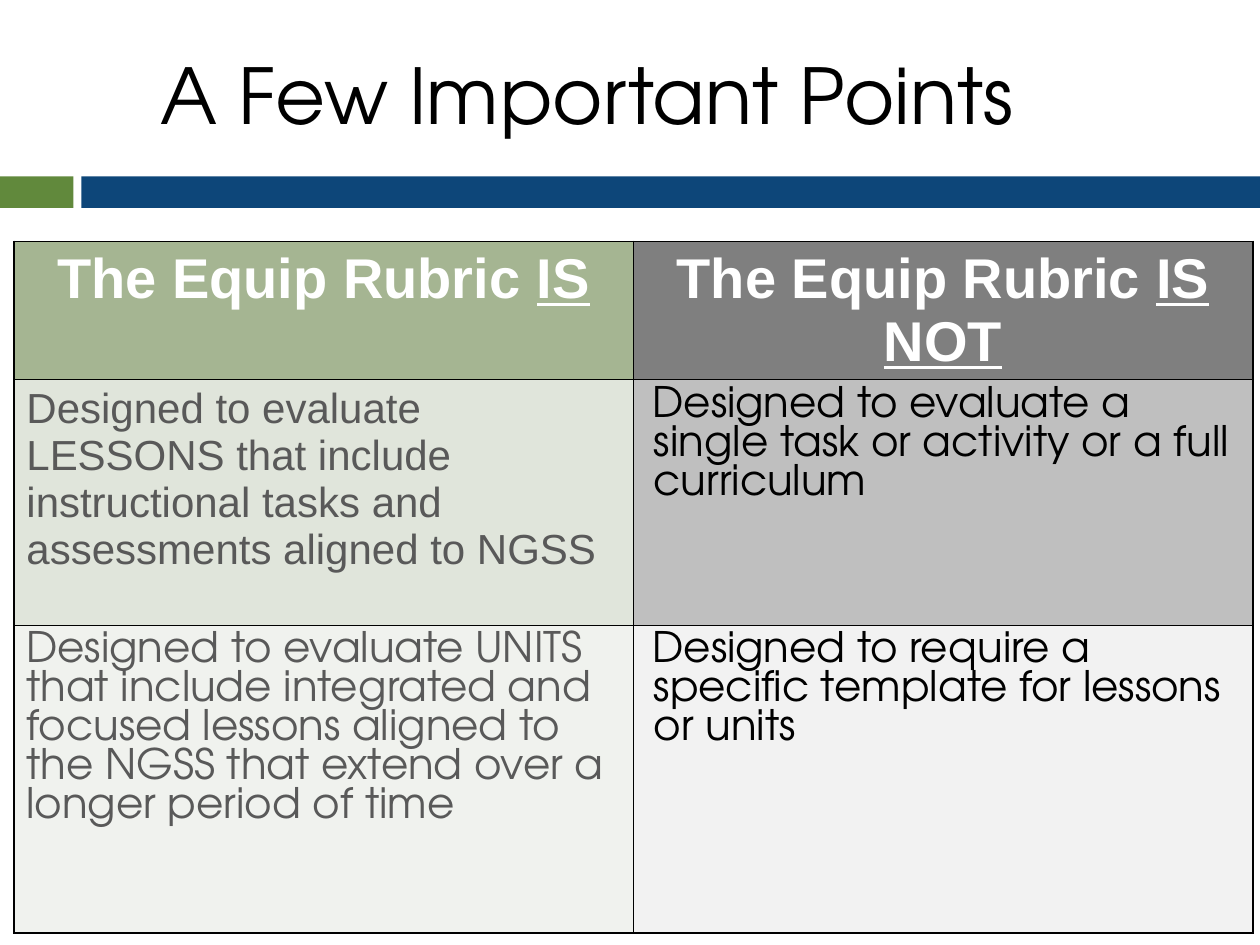
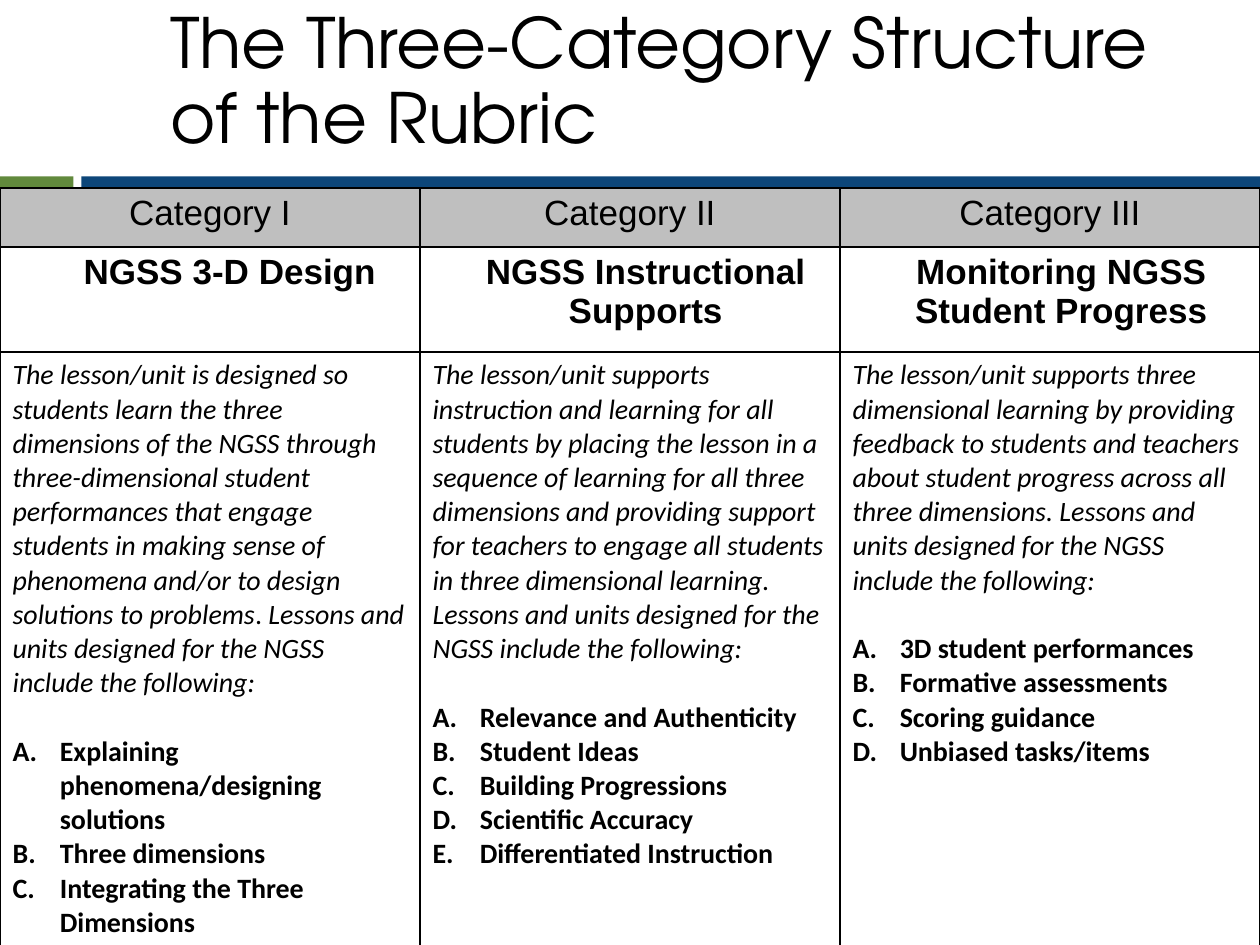
from lxml.etree import SubElement
from pptx import Presentation
from pptx.dml.color import RGBColor
from pptx.enum.shapes import MSO_SHAPE
from pptx.enum.text import MSO_ANCHOR, MSO_AUTO_SIZE, PP_ALIGN
from pptx.oxml.ns import qn
from pptx.util import Pt

rgb = RGBColor.from_string
ADVENTOR, ARIAL, CALIBRI = "TeX Gyre Adventor", "Arial", "Calibri"
BLACK, WHITE, GRAY = "000000", "FFFFFF", "595959"
LEFT, CENTER = PP_ALIGN.LEFT, PP_ALIGN.CENTER


def write(paragraph, text, size, font, color=BLACK, bold=False, italic=False,
          underline=False, align=LEFT, spacing=None, before=None,
          margin=0, indent=0, numbering=None):
    paragraph.alignment = align
    if spacing:
        paragraph.line_spacing = spacing
    if before:
        paragraph.space_before = Pt(before)
    properties = paragraph._p.get_or_add_pPr()
    properties.set("marL", str(Pt(margin)))
    properties.set("indent", str(Pt(indent)))
    if numbering:
        SubElement(properties, qn("a:buAutoNum"), type=numbering)
    run = paragraph.add_run()
    run.text = text
    run.font.size = Pt(size)
    run.font.name = font
    run.font.color.rgb = rgb(color)
    run.font.bold = bold
    run.font.italic = italic
    run.font.underline = underline


def add_grid(slide, left, top, column_width, row_heights, fills):
    columns = len(fills[0])
    grid = slide.shapes.add_table(len(fills), columns, Pt(left), Pt(top),
                                  Pt(column_width * columns), Pt(sum(row_heights))).table
    grid.first_row = grid.horz_banding = False
    for column in grid.columns:
        column.width = Pt(column_width)
    for row, height, row_fills in zip(grid.rows, row_heights, fills):
        row.height = Pt(height)
        for cell, color in zip(row.cells, row_fills):
            for side in ("a:lnL", "a:lnR", "a:lnT", "a:lnB"):
                border = SubElement(cell._tc.get_or_add_tcPr(), qn(side), w=str(Pt(1)))
                SubElement(SubElement(border, qn("a:solidFill")), qn("a:srgbClr"), val=BLACK)
            cell.fill.solid()
            cell.fill.fore_color.rgb = rgb(color)
    return grid


deck = Presentation()
deck.slide_width, deck.slide_height = Pt(720), Pt(540)

bands = [(0, 42, "61893C"), (46.5, 673.5, "0D4679")]
titles = [
    ("A Few Important Points", 84.24, 18, 44),
    ("The Three-Category Structure of the Rubric", 90, 8.64, 39.6),
]
slides = []
for heading, left, top, size in titles:
    slide = deck.slides.add_slide(deck.slide_layouts[5])
    for band_left, band_width, color in bands:
        band = slide.shapes.add_shape(MSO_SHAPE.RECTANGLE, Pt(band_left), Pt(100.8),
                                      Pt(band_width), Pt(18))
        band.shadow.inherit = False
        band.fill.solid()
        band.fill.fore_color.rgb = rgb(color)
        band.line.fill.background()
    title = slide.shapes.title
    title.left, title.top, title.width, title.height = Pt(left), Pt(top), Pt(606.24), Pt(77.76)
    title.text_frame.word_wrap = True
    title.text_frame.auto_size = MSO_AUTO_SIZE.NONE
    title.text_frame.vertical_anchor = MSO_ANCHOR.MIDDLE
    write(title.text_frame.paragraphs[0], heading, size, ADVENTOR, spacing=0.9)
    slides.append(slide)
points_slide, structure_slide = slides

points = add_grid(points_slide, 7.92, 138, 354, [79, 140.4, 175.7],
                  [("A5B592", "7F7F7F"), ("E0E5DB", "BFBFBF"), ("F0F2EE", "F2F2F2")])
for column, verdict in enumerate(["IS", "IS NOT"]):
    header = points.cell(0, column).text_frame.paragraphs[0]
    header_format = dict(size=32, font=ARIAL, color=WHITE, bold=True, align=CENTER,
                         spacing=Pt(35.8))
    write(header, "The Equip Rubric ", **header_format)
    write(header, verdict, underline=True, **header_format)

tight = dict(font=ADVENTOR, spacing=Pt(22.3))
is_not = dict(tight, margin=4.5, indent=-0.75)
statements = [
    (1, 0, "Designed to evaluate LESSONS that include instructional tasks and "
           "assessments aligned to NGSS",
     dict(font=ARIAL, color=GRAY, spacing=Pt(26.7))),
    (1, 1, "Designed to evaluate a single task or activity or a full curriculum", is_not),
    (2, 0, "Designed to evaluate UNITS that include integrated and focused lessons "
           "aligned to the NGSS that extend over a longer period of time",
     dict(tight, color=GRAY)),
    (2, 1, "Designed to require a specific template for lessons or units", is_not),
]
for row, column, statement, style in statements:
    write(points.cell(row, column).text_frame.paragraphs[0], statement, size=24, **style)

LESSONS = "Lessons and units designed for the NGSS include the following:"
categories = [
    ("Category I", "NGSS 3-D Design", 22.5,
     [("The lesson/unit is designed so students learn the three dimensions of the NGSS "
       "through three-dimensional student performances that engage students in making "
       "sense of phenomena and/or to design solutions to problems", True),
      (". ", False), (LESSONS, True)],
     ["Explaining phenomena/designing solutions", "Three dimensions",
      "Integrating the Three Dimensions"]),
    ("Category II", "NGSS Instructional Supports", 18,
     [("The lesson/unit supports instruction and learning for all students by placing "
       "the lesson in a sequence of learning for all three dimensions and providing "
       "support for teachers to engage all students in three dimensional learning. "
       + LESSONS, True)],
     ["Relevance and Authenticity", "Student Ideas", "Building Progressions",
      "Scientific Accuracy", "Differentiated Instruction"]),
    ("Category III", "Monitoring NGSS Student Progress", 13,
     [("The lesson/unit supports three dimensional learning by providing feedback to "
       "students and teachers about student progress across all three dimensions. "
       + LESSONS, True)],
     ["3D student performances", "Formative assessments", "Scoring guidance",
      "Unbiased tasks/items"]),
]
structure = add_grid(structure_slide, 0, 107.4, 240, [33.7, 60, 338.4],
                     [["BFBFBF"] * 3, [WHITE] * 3, [WHITE] * 3])
for column, (category, focus, focus_margin, description, criteria) in enumerate(categories):
    category_frame, focus_frame, detail_frame = [
        structure.cell(row, column).text_frame for row in range(3)]
    write(category_frame.paragraphs[0], category, 20, ARIAL, align=CENTER)
    write(focus_frame.paragraphs[0], focus, 20, ARIAL, bold=True, align=CENTER,
          margin=focus_margin)
    for passage, italic in description:
        write(detail_frame.paragraphs[0], passage, 16, CALIBRI, italic=italic)
    for position, criterion in enumerate(criteria):
        write(detail_frame.add_paragraph(), criterion, 16, CALIBRI, bold=True,
              before=0 if position else 19.5, margin=27, indent=-27,
              numbering="alphaUcPeriod")

deck.save("out.pptx")
